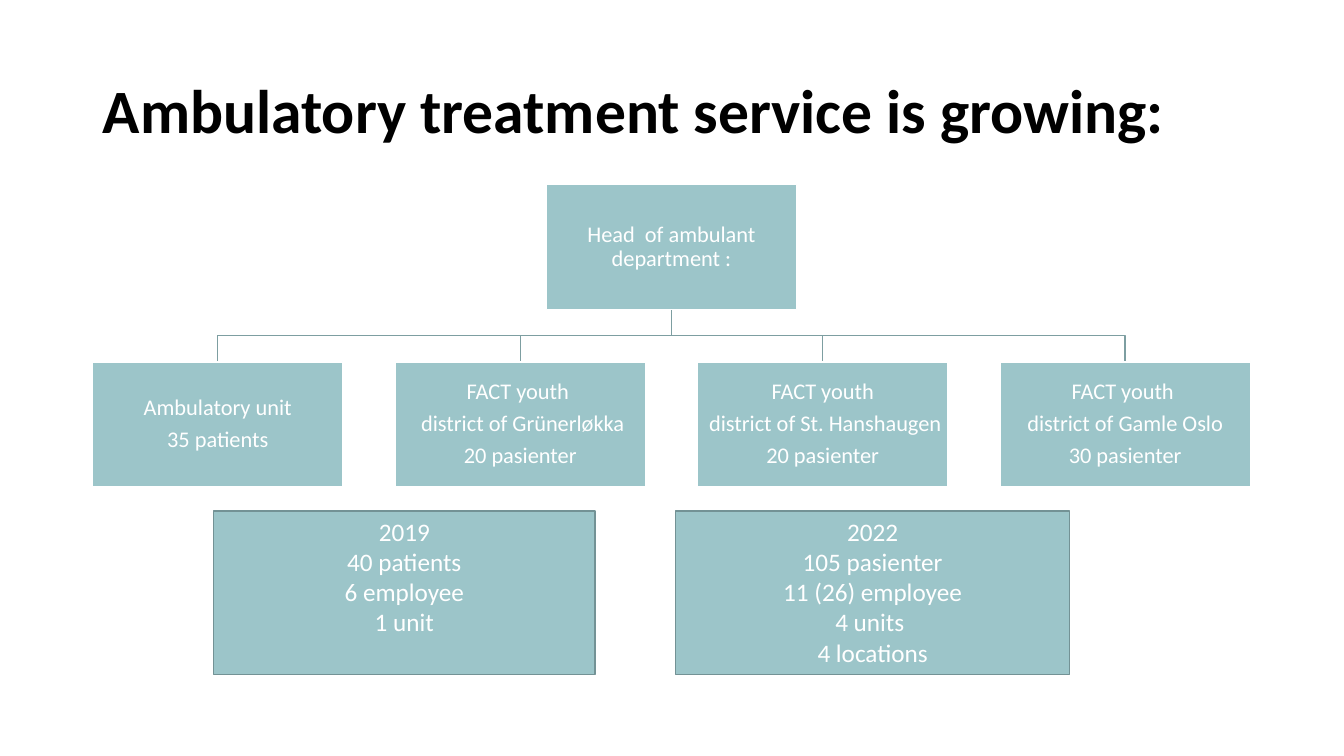
from dataclasses import dataclass

from pptx import Presentation
from pptx.dml.color import RGBColor
from pptx.enum.shapes import MSO_SHAPE as Preset
from pptx.enum.text import MSO_ANCHOR as Anchor, MSO_AUTO_SIZE as AutoSize, PP_ALIGN as Align
from pptx.util import Inches, Pt


@dataclass(frozen=True)
class Theme:
    font: str = "Calibri"
    black: RGBColor = RGBColor(0x00, 0x00, 0x00)
    white: RGBColor = RGBColor(0xFF, 0xFF, 0xFF)
    teal: RGBColor = RGBColor(0x9C, 0xC5, 0xC9)
    branch: RGBColor = RGBColor(0x7D, 0x9E, 0xA1)
    border: RGBColor = RGBColor(0x73, 0x92, 0x95)
    title_size: int = 44
    summary_size: int = 18
    unit_size: int = 16
    line_width: int = 1


@dataclass(frozen=True)
class Summary:
    left: float
    width: float
    lines: tuple[str, ...]


THEME = Theme()
UNIT_WIDTH, UNIT_HEIGHT = 2.48, 1.24
UNIT_LEFT, UNIT_PITCH = 0.92, 3.0
HEAD_TOP, UNIT_TOP = 1.83, 3.59
SUMMARY_TOP, SUMMARY_HEIGHT = 5.07, 1.62

HEAD = ("Head  of ambulant department :",)
UNITS = (
    ("Ambulatory unit", "35 patients"),
    ("FACT youth ", " district of Grünerløkka", "20 pasienter"),
    ("FACT youth", " district of St. Hanshaugen", "20 pasienter"),
    ("FACT youth ", "district of Gamle Oslo", "30 pasienter"),
)
SUMMARIES = (
    Summary(2.12, 3.78, ("2019", "40 patients", "6 employee", "1 unit")),
    Summary(6.7, 3.91, ("2022", "105 pasienter", "11 (26) employee", "4 units ", "4 locations")),
)


def write_text(frame, lines: tuple[str, ...], *, size: int, color: RGBColor = THEME.white,
               bold: bool = False, align: Align = Align.CENTER, anchor: Anchor = Anchor.MIDDLE,
               spacing: float = 1.0, after: float = 0) -> None:
    frame.word_wrap = True
    frame.auto_size = AutoSize.NONE
    frame.vertical_anchor = anchor
    for index, line in enumerate(lines):
        para = frame.add_paragraph() if index else frame.paragraphs[0]
        para.alignment = align
        para.line_spacing = spacing
        para.space_after = Pt(after)
        span = para.add_run()
        span.text = line
        span.font.name = THEME.font
        span.font.size = Pt(size)
        span.font.bold = bold
        span.font.color.rgb = color


def add_box(page, left: float, top: float, width: float, height: float, border: RGBColor):
    box = page.shapes.add_shape(Preset.RECTANGLE, Inches(left), Inches(top),
                                Inches(width), Inches(height))
    box.shadow.inherit = False
    box.fill.solid()
    box.fill.fore_color.rgb = THEME.teal
    box.line.color.rgb = border
    box.line.width = Pt(THEME.line_width)
    return box


def add_unit(page, left: float, top: float, lines: tuple[str, ...]) -> None:
    frame = add_box(page, left, top, UNIT_WIDTH, UNIT_HEIGHT, THEME.white).text_frame
    frame.margin_left = frame.margin_right = Inches(0.01)
    frame.margin_top = frame.margin_bottom = Inches(0.01)
    write_text(frame, lines, size=THEME.unit_size, spacing=0.9, after=5.6)


def add_branch(page, start_x: float, end_x: float) -> None:
    start_y = HEAD_TOP + UNIT_HEIGHT
    middle_y = (start_y + UNIT_TOP) / 2
    builder = page.shapes.build_freeform(Inches(start_x), Inches(start_y))
    corners = ((start_x, middle_y), (end_x, middle_y), (end_x, UNIT_TOP))
    builder.add_line_segments([(Inches(x), Inches(y)) for x, y in corners], close=False)
    branch = builder.convert_to_shape()
    branch.shadow.inherit = False
    branch.fill.background()
    branch.line.color.rgb = THEME.branch
    branch.line.width = Pt(THEME.line_width)


def add_title(page, text: str) -> None:
    title = page.shapes.title
    title.left, title.top = Inches(0.92), Inches(0.4)
    title.width, title.height = Inches(11.5), Inches(1.45)
    write_text(title.text_frame, (text,), size=THEME.title_size, color=THEME.black,
               bold=True, align=Align.LEFT, spacing=0.9)


def main() -> None:
    deck = Presentation()
    deck.slide_width, deck.slide_height = Inches(13.33), Inches(7.5)
    page = deck.slides.add_slide(deck.slide_layouts[5])
    add_title(page, "Ambulatory treatment service is growing:")

    lefts = [UNIT_LEFT + UNIT_PITCH * column for column in range(len(UNITS))]
    head_left = (lefts[0] + lefts[-1]) / 2
    for left in lefts:
        add_branch(page, head_left + UNIT_WIDTH / 2, left + UNIT_WIDTH / 2)
    add_unit(page, head_left, HEAD_TOP, HEAD)
    for left, lines in zip(lefts, UNITS):
        add_unit(page, left, UNIT_TOP, lines)

    for summary in SUMMARIES:
        box = add_box(page, summary.left, SUMMARY_TOP, summary.width, SUMMARY_HEIGHT, THEME.border)
        write_text(box.text_frame, summary.lines, size=THEME.summary_size, anchor=Anchor.TOP)

    deck.save("out.pptx")


if __name__ == "__main__":
    main()
